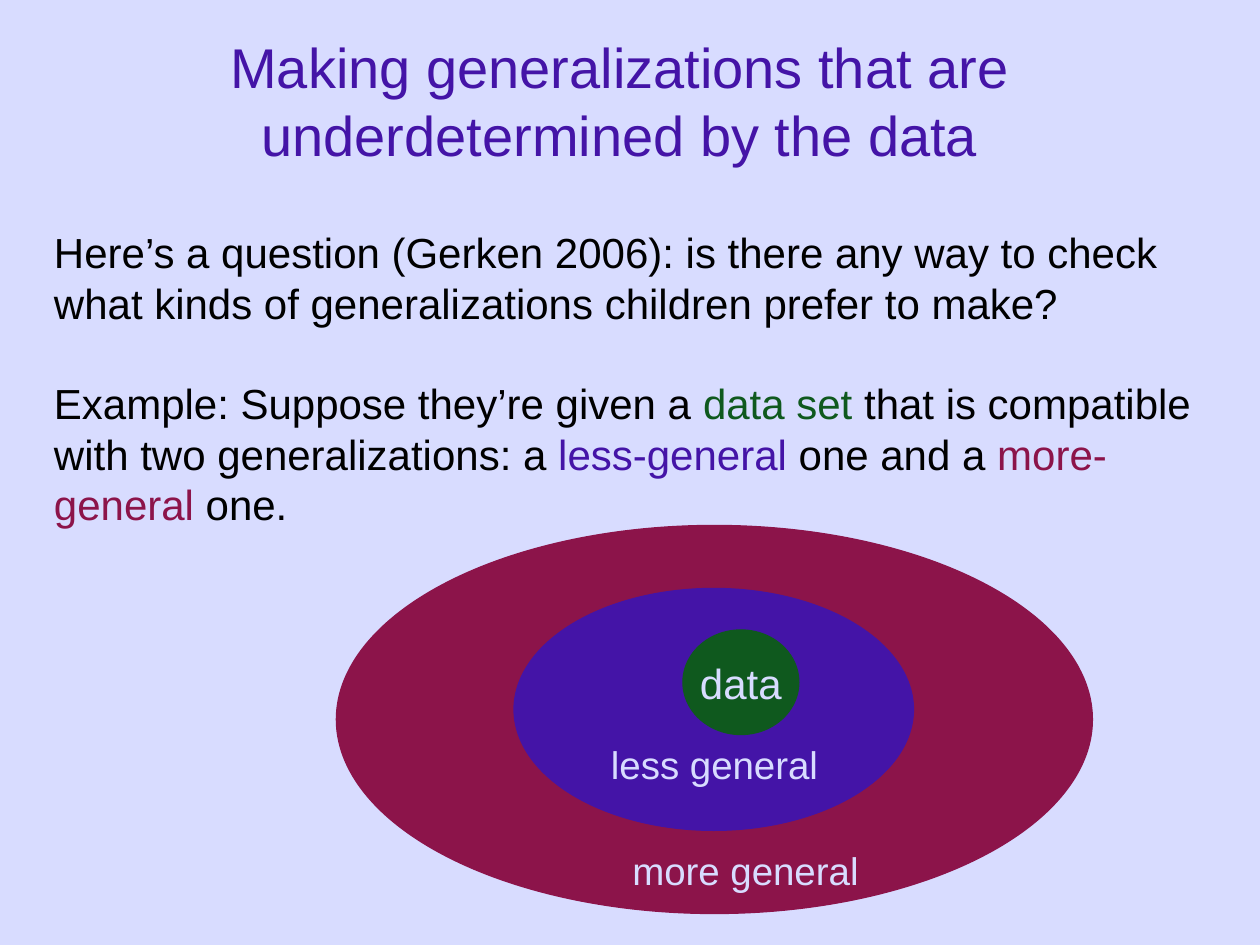
from pptx import Presentation
from pptx.dml.color import RGBColor
from pptx.enum.shapes import MSO_SHAPE
from pptx.enum.text import MSO_ANCHOR, PP_ALIGN
from pptx.util import Inches, Pt

BACKGROUND, BLACK = "D8DCFF", "000000"
PURPLE, MAROON, GREEN = "4414A7", "8C144A", "0F591E"
LINE_HEIGHT = 1.2


def color(hex_string):
    return RGBColor.from_string(hex_string)


class SlideBuilder:
    font = "Arial"

    def __init__(self, presentation):
        self.slide = presentation.slides.add_slide(presentation.slide_layouts[5])
        fill = self.slide.background.fill
        fill.solid()
        fill.fore_color.rgb = color(BACKGROUND)

    def add_paragraphs(self, shape, paragraphs, size, align=PP_ALIGN.LEFT,
                       anchor=MSO_ANCHOR.TOP, wrap=True):
        """Fill a shape with paragraphs, each a list of (text, colour) runs."""
        frame = shape.text_frame
        frame.word_wrap = wrap
        frame.vertical_anchor = anchor
        for index, runs in enumerate(paragraphs):
            paragraph = frame.add_paragraph() if index else frame.paragraphs[0]
            paragraph.alignment = align
            paragraph.line_spacing = Pt(size * LINE_HEIGHT)
            paragraph.space_before = Pt(size * LINE_HEIGHT if index else 0)
            for text, text_color in runs:
                run = paragraph.add_run()
                run.text = text
                run.font.name = self.font
                run.font.size = Pt(size)
                run.font.color.rgb = color(text_color)

    def title(self, text, left, top, width, height):
        title = self.slide.shapes.title
        title.left, title.top = Inches(left), Inches(top)
        title.width, title.height = Inches(width), Inches(height)
        self.add_paragraphs(title, [[(text, PURPLE)]], 32, PP_ALIGN.CENTER,
                            MSO_ANCHOR.MIDDLE)

    def text(self, paragraphs, left, top, width, height, size, wrap=True):
        box = self.slide.shapes.add_textbox(
            Inches(left), Inches(top), Inches(width), Inches(height))
        self.add_paragraphs(box, paragraphs, size, wrap=wrap)

    def ellipse(self, fill_color, left, top, width, height):
        ellipse = self.slide.shapes.add_shape(
            MSO_SHAPE.OVAL, Inches(left), Inches(top), Inches(width), Inches(height))
        ellipse.shadow.inherit = False
        ellipse.fill.solid()
        ellipse.fill.fore_color.rgb = color(fill_color)
        ellipse.line.color.rgb = color(fill_color)
        ellipse.line.width = Pt(0.75)
        return ellipse


def main():
    presentation = Presentation()
    presentation.slide_width, presentation.slide_height = Inches(10), Inches(7.5)
    builder = SlideBuilder(presentation)

    builder.title("Making generalizations that are underdetermined by the data",
                  0.67, 0.17, 8.5, 1.25)
    question = [("Here’s a question (Gerken 2006): is there any way to check "
                 "what kinds of generalizations children prefer to make?", BLACK)]
    example = [
        ("Example: Suppose they’re given a ", BLACK),
        ("data set", GREEN),
        (" that is compatible with two generalizations: a ", BLACK),
        ("less-general", PURPLE),
        (" one and a ", BLACK),
        ("more-general", MAROON),
        (" one.", BLACK),
    ]
    builder.text([question, example], 0.33, 1.75, 9.42, 2.5, 24)

    builder.ellipse(MAROON, 2.67, 4.17, 6, 3.08)
    builder.ellipse(PURPLE, 4.08, 4.67, 3.17, 1.92)
    data = builder.ellipse(GREEN, 5.42, 5, 0.92, 0.83)
    builder.add_paragraphs(data, [[("data", BACKGROUND)]], 24, PP_ALIGN.CENTER,
                           MSO_ANCHOR.MIDDLE, wrap=False)
    builder.text([[("less general", BACKGROUND)]], 4.75, 5.83, 1.85, 0.47, 22, wrap=False)
    builder.text([[("more general", BACKGROUND)]], 4.92, 6.67, 2, 0.47, 22, wrap=False)

    presentation.save("out.pptx")


if __name__ == "__main__":
    main()
